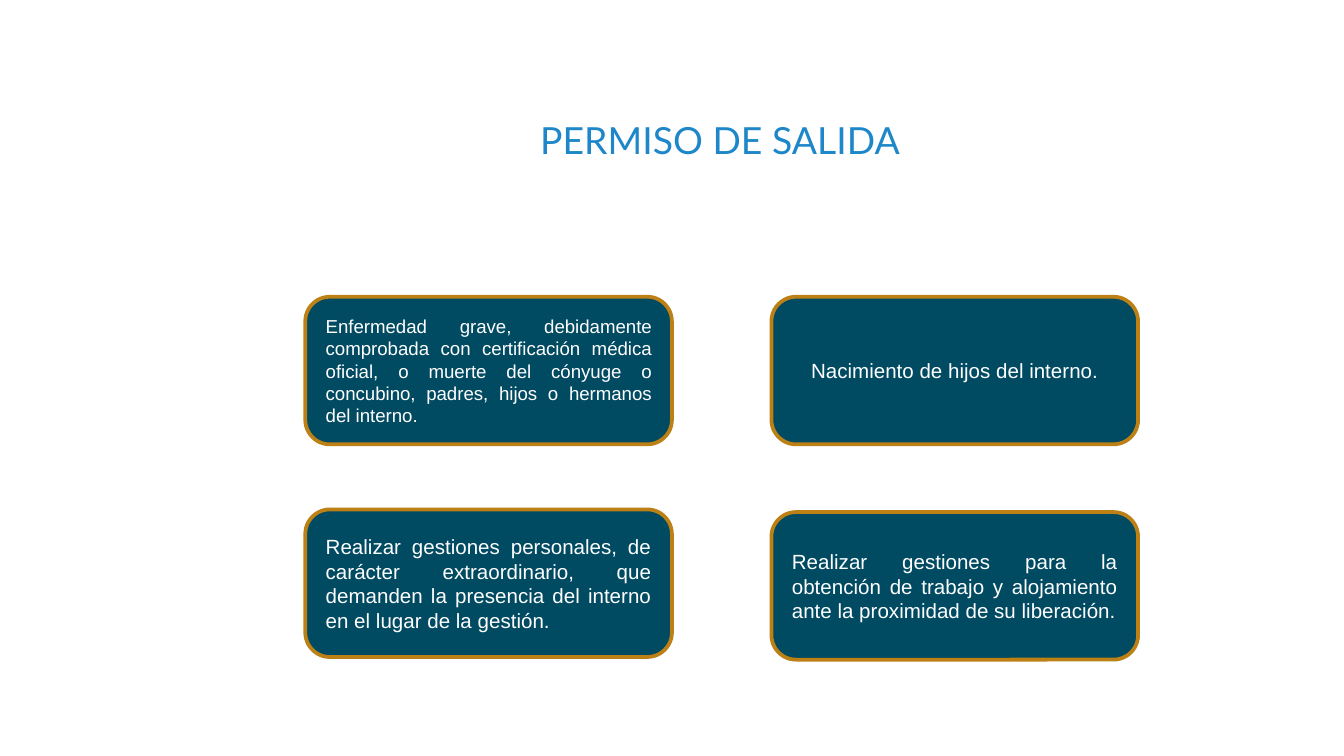
from dataclasses import dataclass

from pptx import Presentation
from pptx.dml.color import RGBColor
from pptx.enum.shapes import MSO_SHAPE as Shape
from pptx.enum.text import MSO_ANCHOR as Anchor, PP_ALIGN as Align
from pptx.slide import Slide
from pptx.util import Cm, Pt

COLORS = {"title": "1E87CA", "card": "004A62", "border": "BD8015", "text": "FFFFFF"}
LEFT_COL, RIGHT_COL = 5.77, 14.58
TOP_ROW = 5.61
CARD_W, CARD_H = 6.93, 2.79


@dataclass
class Card:
    left: float
    top: float
    text: str
    size: int = 11
    align: Align = Align.JUSTIFY


CARDS = [
    Card(LEFT_COL, TOP_ROW,
         "Enfermedad grave, debidamente comprobada con certificación médica oficial, "
         "o muerte del cónyuge o concubino, padres, hijos o hermanos del interno.", size=10),
    Card(RIGHT_COL, TOP_ROW, "Nacimiento de hijos del interno.", align=Align.CENTER),
    Card(LEFT_COL, 9.63,
         "Realizar gestiones personales, de carácter extraordinario, que demanden "
         "la presencia del interno en el lugar de la gestión."),
    Card(RIGHT_COL, 9.68,
         "Realizar gestiones para la obtención de trabajo y alojamiento "
         "ante la proximidad de su liberación."),
]


def color(name: str) -> RGBColor:
    return RGBColor.from_string(COLORS[name])


def set_text(sp, text: str, font: str, size: int, ink: str, align: Align) -> None:
    tf = sp.text_frame
    tf.word_wrap = True
    tf.vertical_anchor = Anchor.MIDDLE
    p = tf.paragraphs[0]
    p.text = text
    p.alignment = align
    p.font.name = font
    p.font.size = Pt(size)
    p.font.color.rgb = color(ink)


def add_title(s: Slide, text: str) -> None:
    sp = s.shapes.add_textbox(Cm(10.21), Cm(1.8), Cm(21.79), Cm(1.8))
    set_text(sp, text, "Lato", 20, "title", Align.LEFT)
    tf = sp.text_frame
    tf.margin_left = tf.margin_right = tf.margin_top = tf.margin_bottom = 0
    tf.paragraphs[0].line_spacing = 0.9


def add_card(s: Slide, card: Card) -> None:
    sp = s.shapes.add_shape(Shape.ROUNDED_RECTANGLE, Cm(card.left), Cm(card.top),
                            Cm(CARD_W), Cm(CARD_H))
    sp.shadow.inherit = False
    sp.fill.solid()
    sp.fill.fore_color.rgb = color("card")
    sp.line.color.rgb = color("border")
    sp.line.width = Pt(2)
    set_text(sp, card.text, "Arial", card.size, "text", card.align)


def main() -> None:
    prs = Presentation()
    prs.slide_width, prs.slide_height = Cm(25.4), Cm(14.29)
    s = prs.slides.add_slide(prs.slide_layouts[6])
    add_title(s, "PERMISO DE SALIDA")
    for card in CARDS:
        add_card(s, card)
    prs.save("out.pptx")


if __name__ == "__main__":
    main()
